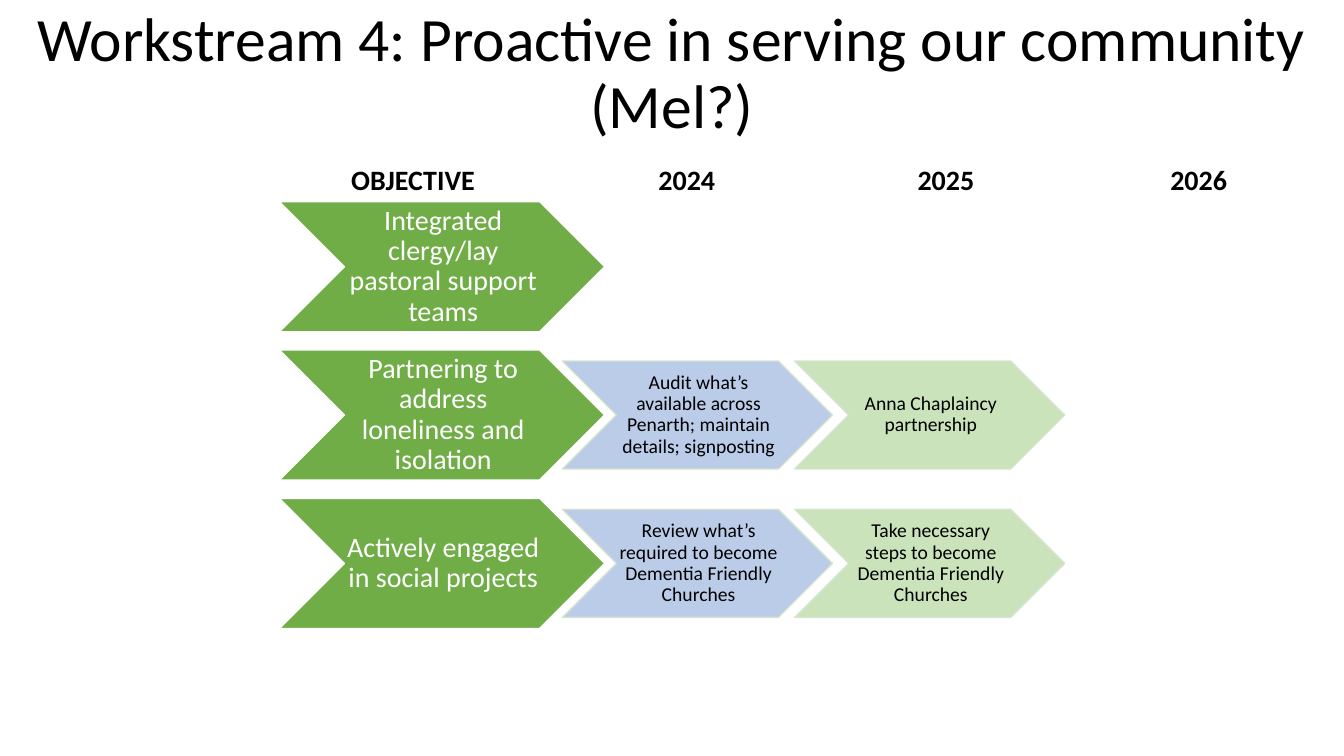
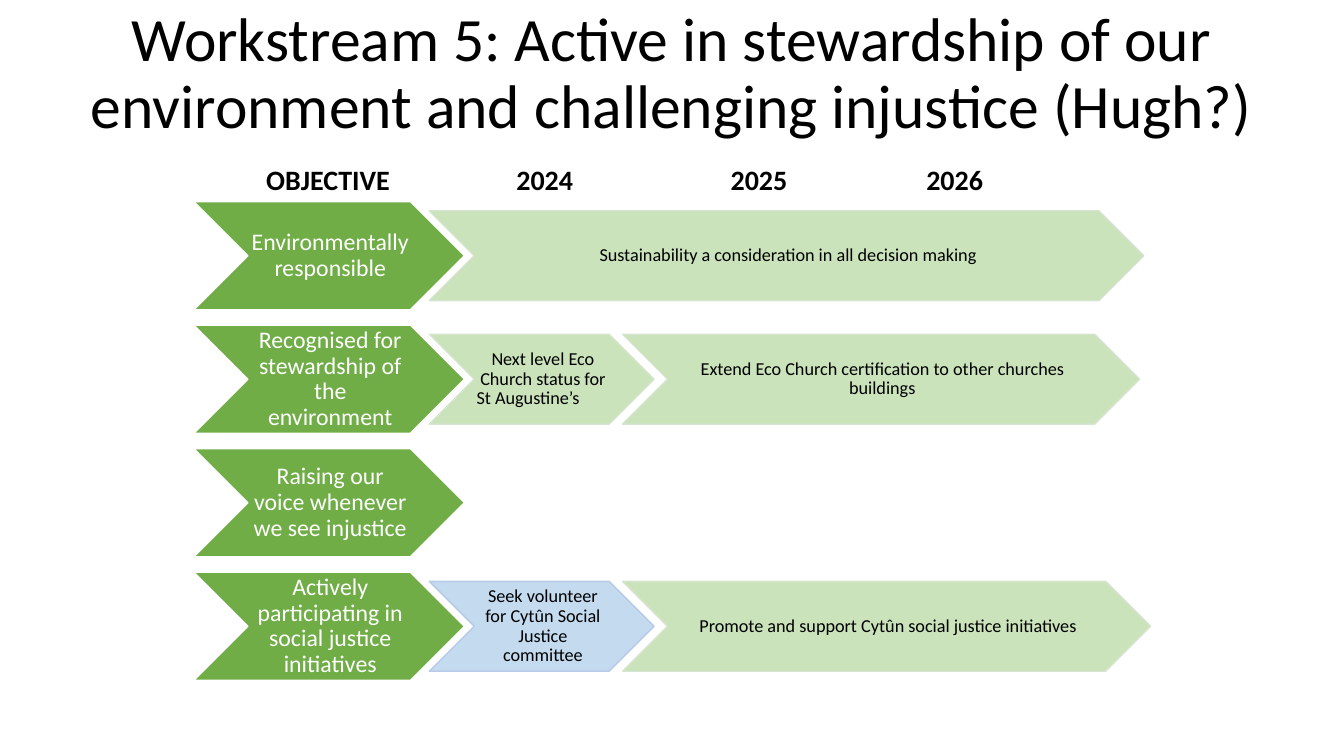
from dataclasses import dataclass

from lxml.etree import SubElement
from pptx import Presentation
from pptx.dml.color import RGBColor
from pptx.enum.shapes import MSO_SHAPE
from pptx.enum.text import MSO_ANCHOR, PP_ALIGN
from pptx.oxml.ns import qn
from pptx.util import Cm, Pt


@dataclass(frozen=True)
class Theme:
    """Colours, type sizes and shared measures of the deck, in centimetres and points."""

    font: str = "Calibri"
    ink: str = "000000"
    paper: str = "FFFFFF"
    objective: str = "70AD47"
    green: str = "C5E0B4"
    green_edge: str = "D5E3CF"
    blue: str = "B4C7E7"
    sky: str = "BDD7EE"
    title_size: int = 44
    heading_size: int = 20
    slide_width: float = 33.87
    slide_height: float = 19.05
    first_row: float = 5.08
    heading_left: float = 5.59
    heading_inset: float = 0.25
    step_opacity: int = 90


THEME = Theme()
HEADINGS = ("OBJECTIVE", "2024", "2025", "2026")
STEP_COLOURS = {
    "green": (THEME.green, THEME.green_edge),
    "blue": (THEME.blue, THEME.green_edge),
    "sky": (THEME.sky, THEME.blue),
}

WORKSTREAMS = [
    {
        "title": "Workstream 4: Proactive in serving our community (Mel?)",
        "left": 7.04,
        "height": 3.28,
        "sizes": (20, 14),
        "centres": (10.41, 17.31, 23.84, 30.21),
        "heading_width": 28.27,
        "rows": [
            ("Integrated clergy/lay pastoral support teams", []),
            ("Partnering to address loneliness and isolation", [
                ("Audit what’s available across Penarth; maintain details; signposting", "blue", None),
                ("Anna Chaplaincy partnership", "green", None),
            ]),
            ("Actively engaged in social projects", [
                ("Review what’s required to become Dementia Friendly Churches", "blue", None),
                ("Take necessary steps to become Dementia Friendly Churches", "green", None),
            ]),
        ],
    },
    {
        "title": "Workstream 5: Active in stewardship of our environment and challenging injustice (Hugh?)",
        "left": 4.88,
        "height": 2.73,
        "sizes": (17, 13),
        "centres": (8.27, 13.73, 19.13, 24.06),
        "heading_width": 22.12,
        "rows": [
            ("Environmentally responsible", [
                ("Sustainability a consideration in all decision making", "green", 18.01),
            ]),
            ("Recognised for stewardship of the environment", [
                ("Next level Eco Church status for St Augustine’s\t", "green", None),
                ("Extend Eco Church certification to other churches buildings", "green", 13.03),
            ]),
            ("Raising our voice whenever we see injustice", []),
            ("Actively participating in social justice initiatives", [
                ("Seek volunteer for Cytûn Social Justice committee", "sky", None),
                ("Promote and support Cytûn social justice initiatives", "green", 13.31),
            ]),
        ],
    },
]


def apply(target, values):
    """Set each named attribute of the target."""
    for name, value in values.items():
        setattr(target, name, value)


class Deck:
    """Holds the theme, the presentation and the slide being built."""

    def __init__(self, theme):
        """Start an empty widescreen presentation."""
        self.theme = theme
        self.presentation = Presentation()
        self.presentation.slide_width = Cm(theme.slide_width)
        self.presentation.slide_height = Cm(theme.slide_height)
        self.slide = None

    def new_slide(self):
        """Add a blank slide and make it current."""
        self.slide = self.presentation.slides.add_slide(self.presentation.slide_layouts[6])

    def fill_text(self, frame, text, size, colour, frame_format, paragraph_format, bold=False):
        """Put one styled paragraph into a text frame."""
        apply(frame, {"word_wrap": True, **frame_format})
        paragraph = frame.paragraphs[0]
        apply(paragraph, paragraph_format)
        run = paragraph.add_run()
        run.text = text
        apply(run.font, {"name": self.theme.font, "size": Pt(size), "bold": bold})
        run.font.color.rgb = RGBColor.from_string(colour)

    def title(self, text):
        """Add the centred title across the top."""
        box = self.slide.shapes.add_textbox(0, Cm(0.05), Cm(self.theme.slide_width), Cm(3.68))
        self.fill_text(box.text_frame, text, self.theme.title_size, self.theme.ink,
                       {"vertical_anchor": MSO_ANCHOR.MIDDLE},
                       {"alignment": PP_ALIGN.CENTER, "line_spacing": 0.9})

    def headings(self, centres, width):
        """Add the column headings, each centred on a tab stop."""
        theme = self.theme
        box = self.slide.shapes.add_textbox(Cm(theme.heading_left), Cm(3.96), Cm(width), Cm(1.12))
        properties = box.text_frame.paragraphs[0]._p.get_or_add_pPr()
        stops = SubElement(properties, qn("a:tabLst"))
        for centre in centres:
            position = Cm(centre - theme.heading_left - theme.heading_inset)
            SubElement(stops, qn("a:tab"), pos=str(position), algn="ctr")
        self.fill_text(box.text_frame, "".join("\t" + heading for heading in HEADINGS),
                       theme.heading_size, theme.ink, {"margin_left": Cm(theme.heading_inset)},
                       {"alignment": PP_ALIGN.LEFT}, bold=True)

    def chevron(self, text, place, size, fill, edge, ink, opacity=100):
        """Add a chevron with centred text."""
        chevron = self.slide.shapes.add_shape(MSO_SHAPE.CHEVRON, *map(Cm, place))
        chevron.shadow.inherit = False
        chevron.fill.solid()
        chevron.fill.fore_color.rgb = RGBColor.from_string(fill)
        chevron.line.color.rgb = RGBColor.from_string(edge)
        chevron.line.width = Pt(1)
        if opacity < 100:
            for colour in chevron._element.spPr.iter(qn("a:srgbClr")):
                SubElement(colour, qn("a:alpha"), val=str(opacity * 1000))
        self.fill_text(chevron.text_frame, text, size, ink,
                       {"vertical_anchor": MSO_ANCHOR.MIDDLE, "margin_left": Cm(0.06),
                        "margin_right": 0, "margin_top": Cm(0.03), "margin_bottom": Cm(0.03)},
                       {"alignment": PP_ALIGN.CENTER, "line_spacing": 0.9})

    def roadmap(self, rows, left, height, sizes):
        """Lay out objectives in rows, each followed by its steps."""
        theme = self.theme
        objective_size, step_size = sizes
        width = 2.5 * height
        step_height = 0.83 * height
        step_width = 2.5 * step_height
        for index, (objective, steps) in enumerate(rows):
            top = theme.first_row + index * 1.14 * height
            self.chevron(objective, (left, top, width, height), objective_size,
                         theme.objective, theme.paper, theme.paper)
            step_left = left + 0.87 * width
            step_top = top + (height - step_height) / 2
            for step, colour, span in steps:
                self.chevron(step, (step_left, step_top, span or step_width, step_height),
                             step_size, *STEP_COLOURS[colour], theme.ink, theme.step_opacity)
                step_left += 0.86 * step_width


def main():
    """Build one roadmap slide per workstream and save the deck."""
    deck = Deck(THEME)
    for workstream in WORKSTREAMS:
        deck.new_slide()
        deck.title(workstream["title"])
        deck.roadmap(workstream["rows"], workstream["left"], workstream["height"], workstream["sizes"])
        deck.headings(workstream["centres"], workstream["heading_width"])
    deck.presentation.save("out.pptx")


if __name__ == "__main__":
    main()
